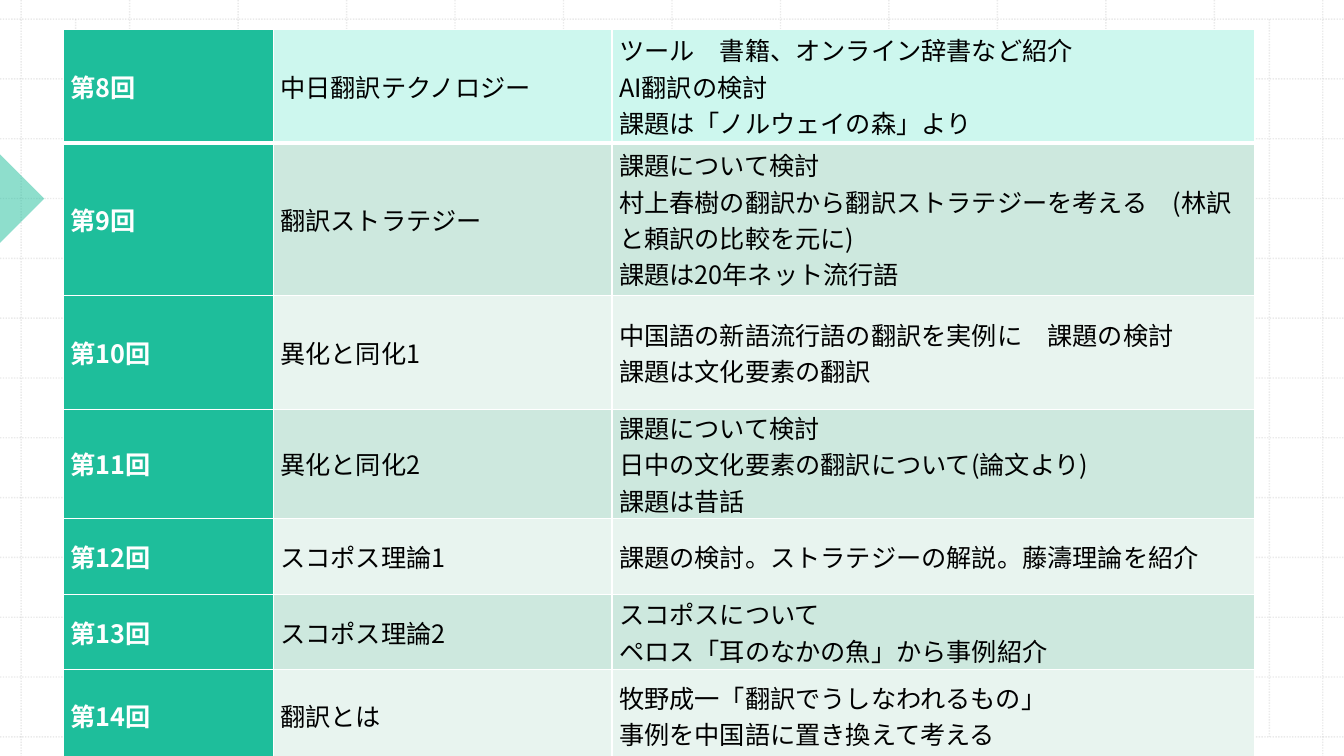
import pptx
import pptx.dml.color
import pptx.enum.dml
import pptx.enum.shapes
import pptx.enum.text
import pptx.oxml.ns
import pptx.util
from lxml import etree

WIDTH, HEIGHT = 13.33, 7.5
GRID_STEPS = 12
GRID_LEFT, GRID_TOP = 0.21, 0.19
COLUMN_STEP = (13.12 - GRID_LEFT) / GRID_STEPS
ROW_STEP = (7.31 - GRID_TOP) / GRID_STEPS
MARGIN_LINES = (0.75, 12.59)
FONT = "Noto Sans CJK JP"
GREEN, WHITE, BLACK = "1EBE9B", "FFFFFF", "000000"
FIRST_BAND, DARK_BAND, LIGHT_BAND = "CDF7EE", "CDE8DE", "E8F4EF"
COLUMN_WIDTHS = (2.08, 3.36, 6.37)
LESSONS = [
    (1.13, "第8回", "中日翻訳テクノロジー",
     "ツール　書籍、オンライン辞書など紹介\nAI翻訳の検討\n課題は「ノルウェイの森」より"),
    (1.51, "第9回", "翻訳ストラテジー",
     "課題について検討\n"
     "村上春樹の翻訳から翻訳ストラテジーを考える　(林訳と頼訳の比較を元に)\n"
     "課題は20年ネット流行語"),
    (1.13, "第10回", "異化と同化1",
     "中国語の新語流行語の翻訳を実例に　課題の検討\n課題は文化要素の翻訳"),
    (0.75, "第11回", "異化と同化2",
     "課題について検討\n日中の文化要素の翻訳について(論文より)\n課題は昔話"),
    (0.75, "第12回", "スコポス理論1",
     "課題の検討。ストラテジーの解説。藤濤理論を紹介"),
    (0.75, "第13回", "スコポス理論2",
     "スコポスについて\nペロス「耳のなかの魚」から事例紹介"),
    (0.9, "第14回", "翻訳とは",
     "牧野成一「翻訳でうしなわれるもの」\n事例を中国語に置き換えて考える"),
]


def inches(value):
    """Return a length in inches."""
    return pptx.util.Inches(value)


def paint(fill, color, opacity=100):
    """Give a fill a solid hex colour and an opacity in percent."""
    fill.solid()
    fill.fore_color.rgb = pptx.dml.color.RGBColor.from_string(color)
    if opacity < 100:
        srgb = fill._xPr.find(".//" + pptx.oxml.ns.qn("a:srgbClr"))
        etree.SubElement(srgb, pptx.oxml.ns.qn("a:alpha"), val=str(opacity * 1000))


def add_grid_line(slide, x1, y1, x2, y2):
    """Draw one faint dotted line."""
    rule = slide.shapes.add_connector(
        pptx.enum.shapes.MSO_CONNECTOR.STRAIGHT,
        inches(x1), inches(y1), inches(x2), inches(y2))
    rule.line.width = pptx.util.Pt(1)
    paint(rule.line.fill, "BCBCBC", 30)
    rule.line.dash_style = pptx.enum.dml.MSO_LINE.ROUND_DOT
    etree.SubElement(rule._element.spPr, pptx.oxml.ns.qn("a:effectLst"))


def add_background_grid(slide):
    """Draw the evenly spaced grid and its two margin lines."""
    for step in range(GRID_STEPS + 1):
        x = GRID_LEFT + step * COLUMN_STEP
        y = GRID_TOP + step * ROW_STEP
        add_grid_line(slide, x, 0, x, HEIGHT)
        add_grid_line(slide, 0, y, WIDTH, y)
    for x in MARGIN_LINES:
        add_grid_line(slide, x, GRID_TOP, x, HEIGHT - GRID_TOP)


def add_edge_arrow(slide):
    """Place the translucent triangle that points in from the left edge."""
    arrow = slide.shapes.add_shape(
        pptx.enum.shapes.MSO_SHAPE.RIGHT_TRIANGLE,
        inches(-0.31), inches(1.66), inches(0.62), inches(0.62))
    arrow.rotation = 225
    arrow.shadow.inherit = False
    paint(arrow.fill, GREEN, 50)
    arrow.line.fill.background()


def set_borders(cell, top, bottom):
    """Give a cell white borders with the given top and bottom widths."""
    qn = pptx.oxml.ns.qn
    properties = cell._tc.get_or_add_tcPr()
    widths = {"a:lnL": 1, "a:lnR": 1, "a:lnT": top, "a:lnB": bottom}
    for position, (side, width) in enumerate(widths.items()):
        border = etree.Element(qn(side), w=str(pptx.util.Pt(width)))
        fill = etree.SubElement(border, qn("a:solidFill"))
        etree.SubElement(fill, qn("a:srgbClr"), val=WHITE)
        properties.insert(position, border)


def fill_cell(cell, text, background, color, bold):
    """Write and format the text of one cell."""
    cell.text = text
    cell.vertical_anchor = pptx.enum.text.MSO_ANCHOR.MIDDLE
    cell.margin_left = cell.margin_right = inches(0.07)
    cell.margin_top = cell.margin_bottom = 0
    paint(cell.fill, background)
    for paragraph in cell.text_frame.paragraphs:
        font = paragraph.font
        font.size = pptx.util.Pt(18)
        font.bold = bold
        paint(font.fill, color)
        font.name = FONT
        etree.SubElement(font._rPr, pptx.oxml.ns.qn("a:ea"), typeface=FONT)


def add_schedule(slide):
    """Build the table of lessons."""
    heights = [lesson[0] for lesson in LESSONS]
    schedule = slide.shapes.add_table(
        len(LESSONS), len(COLUMN_WIDTHS), inches(0.63), inches(0.29),
        inches(sum(COLUMN_WIDTHS)), inches(sum(heights))).table
    schedule.first_row = schedule.horz_banding = False
    schedule.first_col = True
    for column, width in zip(schedule.columns, COLUMN_WIDTHS):
        column.width = inches(width)
    for number, (height, *texts) in enumerate(LESSONS):
        schedule.rows[number].height = inches(height)
        band = DARK_BAND if number % 2 else LIGHT_BAND
        if number == 0:
            band = FIRST_BAND
        for column, text in enumerate(texts):
            cell = schedule.cell(number, column)
            is_label = column == 0
            fill_cell(cell, text, GREEN if is_label else band,
                      WHITE if is_label else BLACK, is_label)
            set_borders(cell, 3 if number == 1 else 1, 3 if number == 0 else 1)


def main():
    """Build the slide and save it."""
    presentation = pptx.Presentation()
    presentation.slide_width = inches(WIDTH)
    presentation.slide_height = inches(HEIGHT)
    slide = presentation.slides.add_slide(presentation.slide_layouts[6])
    paint(slide.background.fill, WHITE)
    add_background_grid(slide)
    add_edge_arrow(slide)
    add_schedule(slide)
    presentation.save("out.pptx")


if __name__ == "__main__":
    main()
